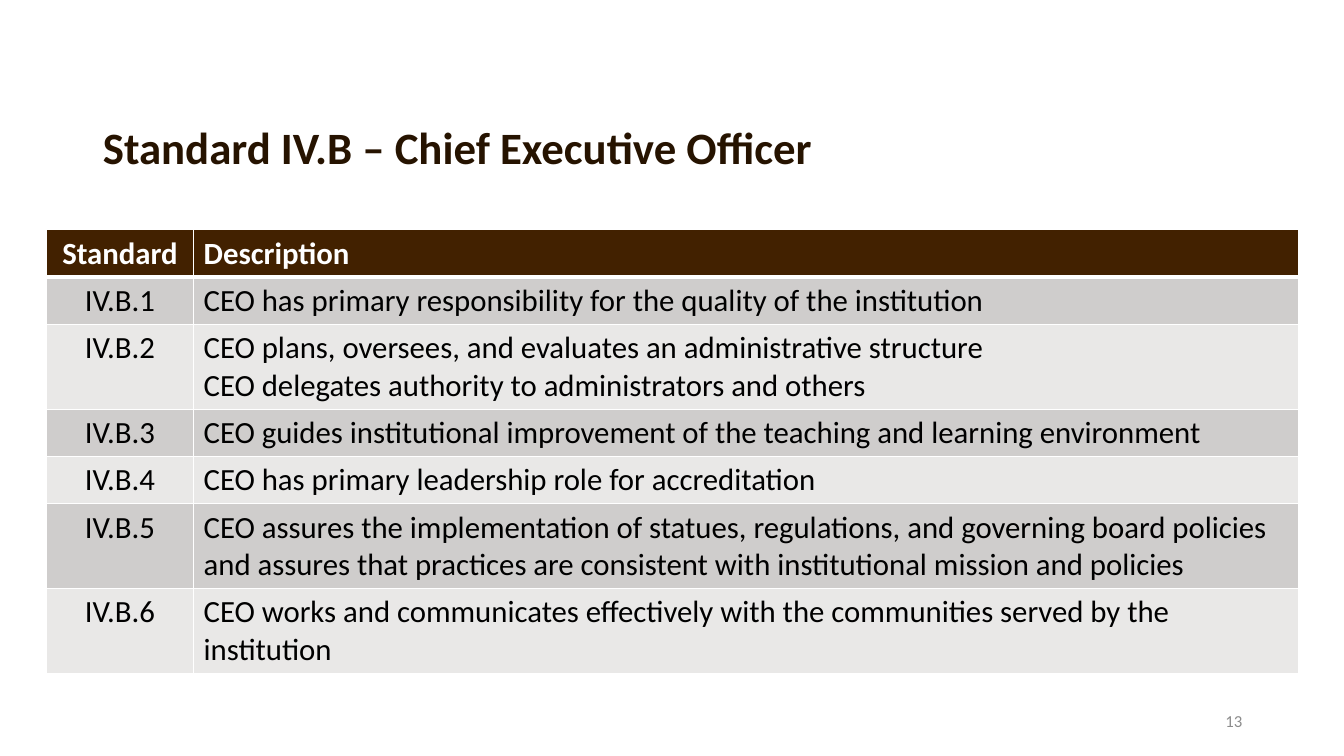
from lxml import etree
from pptx import Presentation
from pptx.dml.color import RGBColor
from pptx.enum.text import MSO_ANCHOR, PP_ALIGN
from pptx.oxml.ns import qn
from pptx.util import Inches, Pt

LEFT, CENTER, RIGHT = PP_ALIGN.LEFT, PP_ALIGN.CENTER, PP_ALIGN.RIGHT
TOP, MIDDLE = MSO_ANCHOR.TOP, MSO_ANCHOR.MIDDLE
TITLE_ONLY = 5

COLORS = {
    "title": "261300",
    "head": "422100",
    "odd": "CFCDCC",
    "even": "E9E8E7",
    "text": "000000",
    "white": "FFFFFF",
    "number": "8C8C8C",
}

ROWS = [
    ("Standard", "Description"),
    ("IV.B.1", "CEO has primary responsibility for the quality of the institution"),
    ("IV.B.2", "CEO plans, oversees, and evaluates an administrative structure\n"
               "CEO delegates authority to administrators and others"),
    ("IV.B.3", "CEO guides institutional improvement of the teaching and learning environment"),
    ("IV.B.4", "CEO has primary leadership role for accreditation"),
    ("IV.B.5", "CEO assures the implementation of statues, regulations, and governing board "
               "policies and assures that practices are consistent with institutional "
               "mission and policies"),
    ("IV.B.6", "CEO works and communicates effectively with the communities served by "
               "the institution"),
]
WIDTHS = (1.46, 10.96)
HEIGHTS = (0.47, 0.47, 0.84, 0.47, 0.47, 0.84, 0.84)


class Deck:
    font = "Calibri"

    def __init__(self):
        self.prs = Presentation()
        self.prs.slide_width = Inches(13.33)
        self.prs.slide_height = Inches(7.5)
        self.slide = self.prs.slides.add_slide(self.prs.slide_layouts[TITLE_ONLY])

    def color(self, name):
        return RGBColor.from_string(COLORS[name])

    def text(self, frame, text, size, color, align=LEFT, bold=False):
        frame.text = text
        for para in frame.paragraphs:
            para.alignment = align
            para.font.name = self.font
            para.font.size = Pt(size)
            para.font.bold = bold
            para.font.color.rgb = self.color(color)

    def title(self, text, left, top, width, height):
        shape = self.slide.shapes.title
        shape.left, shape.top = Inches(left), Inches(top)
        shape.width, shape.height = Inches(width), Inches(height)
        frame = shape.text_frame
        self.text(frame, text, 32, "title", bold=True)
        frame.vertical_anchor = MIDDLE
        frame.paragraphs[0].line_spacing = 0.9

    def number(self, text, left, top, width, height):
        box = self.slide.shapes.add_textbox(
            Inches(left), Inches(top), Inches(width), Inches(height))
        frame = box.text_frame
        frame.word_wrap = True
        frame.vertical_anchor = MIDDLE
        self.text(frame, text, 12, "number", RIGHT)

    def border(self, cell, side, width):
        props = cell._tc.get_or_add_tcPr()
        line = etree.SubElement(props, qn(f"a:ln{side}"), w=str(Pt(width)))
        fill = etree.SubElement(line, qn("a:solidFill"))
        etree.SubElement(fill, qn("a:srgbClr"), val=COLORS["white"])

    def cell(self, cell, text, row, col):
        head = row == 0
        thick = {(0, "B"), (1, "T")}
        for side in "LRTB":
            self.border(cell, side, 3 if (row, side) in thick else 1)
        cell.fill.solid()
        cell.fill.fore_color.rgb = self.color(
            "head" if head else "odd" if row % 2 else "even")
        cell.vertical_anchor = TOP
        self.text(cell.text_frame, text, 22, "white" if head else "text",
                  LEFT if col else CENTER, head)

    def table(self, rows, left, top, widths, heights):
        table = self.slide.shapes.add_table(
            len(rows), len(widths), Inches(left), Inches(top),
            Inches(sum(widths)), Inches(sum(heights))).table
        for col, width in zip(table.columns, widths):
            col.width = Inches(width)
        for row, height in zip(table.rows, heights):
            row.height = Inches(height)
        for r, texts in enumerate(rows):
            for c, text in enumerate(texts):
                self.cell(table.cell(r, c), text, r, c)


def main():
    deck = Deck()
    deck.title("Standard IV.B – Chief Executive Officer", 0.92, 0.99, 11.5, 1)
    deck.number("13", 9.42, 6.95, 3, 0.4)
    deck.table(ROWS, 0.46, 2.28, WIDTHS, HEIGHTS)
    deck.prs.save("out.pptx")


if __name__ == "__main__":
    main()
